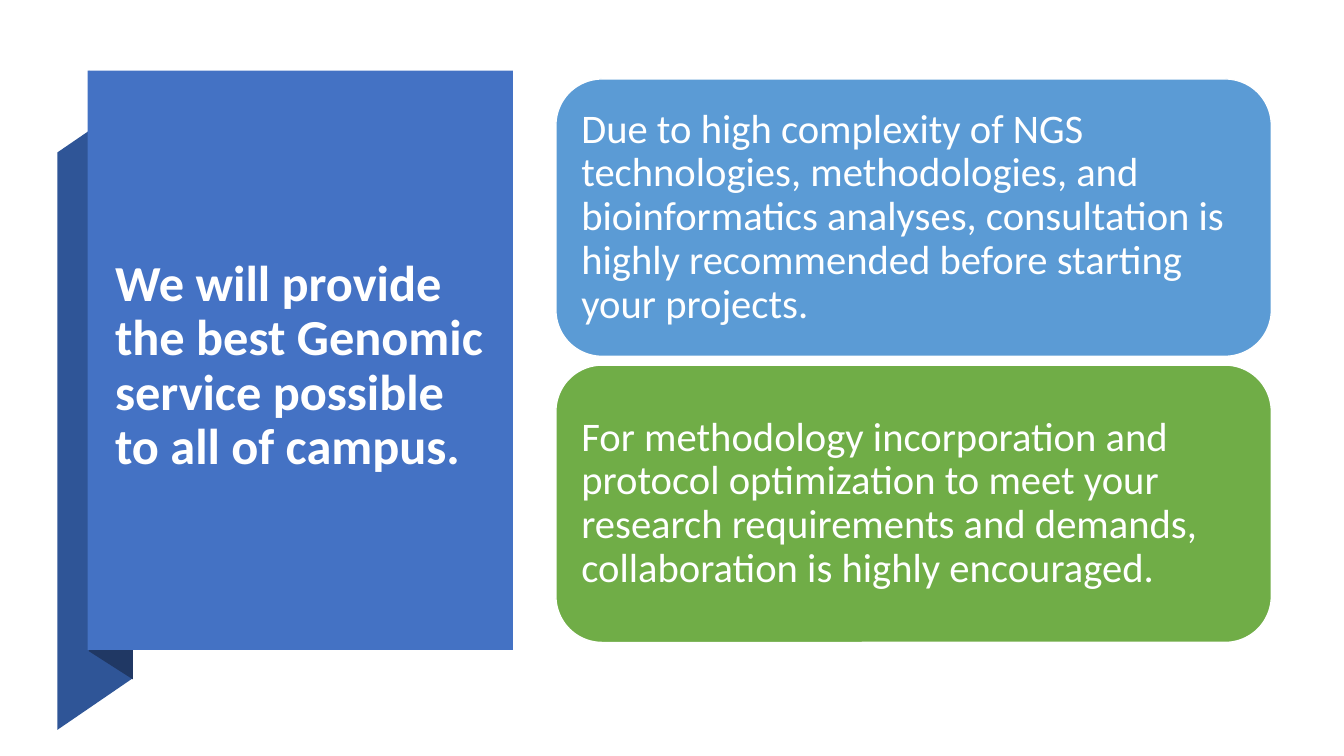
"""Build a slide with a folded ribbon panel and two message cards."""
from dataclasses import dataclass

from pptx import Presentation
from pptx import util as u
from pptx.dml.color import RGBColor
from pptx.enum import shapes, text


@dataclass(frozen=True)
class Theme:
    """Colours, font and type sizes of the slide."""
    panel: str = "4472C4"
    ribbon: str = "2F5597"
    fold: str = "203864"
    consultation: str = "5B9BD5"
    collaboration: str = "70AD47"
    white: str = "FFFFFF"
    font: str = "Calibri"
    headline_size: int = 36
    card_size: int = 29


THEME = Theme()
RIBBON = [(1.45, 18.39), (3.35, 17.09), (3.35, 2.54), (1.45, 3.84)]
FOLD = [(2.24, 16.41), (3.35, 17.12), (3.35, 2.51), (2.24, 1.78)]
HEADLINE = "We will provide the best Genomic service possible to all of campus."
CARDS = [
    (THEME.consultation,
     "Due to high complexity of NGS technologies, methodologies, and bioinformatics "
     "analyses, consultation is highly recommended before starting your projects."),
    (THEME.collaboration,
     "For methodology incorporation and protocol optimization to meet your research "
     "requirements and demands, collaboration is highly encouraged."),
]
CARD_TOP, CARD_PITCH = 1.99, 7.21


def paint(shape, fill, outline=None):
    """Give a shape a flat fill, no shadow and an optional outline."""
    shape.shadow.inherit = False
    shape.fill.solid()
    shape.fill.fore_color.rgb = RGBColor.from_string(fill)
    if outline:
        shape.line.color.rgb = RGBColor.from_string(outline)
        shape.line.width = u.Pt(1)
    else:
        shape.line.fill.background()


def add_facet(slide, corners, fill):
    """Draw one closed face of the ribbon from corners in centimetres."""
    points = [(u.Cm(x), u.Cm(y)) for x, y in corners]
    builder = slide.shapes.build_freeform(*points[0])
    builder.add_line_segments(points[1:], close=True)
    paint(builder.convert_to_shape(), fill)


def add_block(slide, preset, box, fill, outline=None):
    """Draw a filled preset shape in a box given in centimetres."""
    block = slide.shapes.add_shape(preset, *(u.Cm(length) for length in box))
    paint(block, fill, outline)
    return block


def write(block, words, size, insets, bold=False):
    """Set left-aligned white words, vertically centred, inside a block."""
    frame = block.text_frame
    frame.word_wrap = True
    frame.vertical_anchor = text.MSO_ANCHOR.MIDDLE
    (frame.margin_left, frame.margin_top,
     frame.margin_right, frame.margin_bottom) = (u.Cm(inset) for inset in insets)
    paragraph = frame.paragraphs[0]
    paragraph.alignment = text.PP_ALIGN.LEFT
    paragraph.line_spacing = 0.9
    run = paragraph.add_run()
    run.text = words
    run.font.name = THEME.font
    run.font.size = u.Pt(size)
    run.font.bold = bold
    run.font.color.rgb = RGBColor.from_string(THEME.white)


def main():
    """Compose the slide and save it."""
    deck = Presentation()
    deck.slide_width, deck.slide_height = u.Cm(33.87), u.Cm(19.05)
    slide = deck.slides.add_slide(deck.slide_layouts[6])

    add_facet(slide, RIBBON, THEME.ribbon)
    add_facet(slide, FOLD, THEME.fold)
    panel = add_block(slide, shapes.MSO_SHAPE.RECTANGLE,
                      (2.21, 1.78, 10.72, 14.6), THEME.panel)
    write(panel, HEADLINE, THEME.headline_size, (0.69, 0.46, 0.69, 0.13), bold=True)

    for row, (fill, message) in enumerate(CARDS):
        card = add_block(slide, shapes.MSO_SHAPE.ROUNDED_RECTANGLE,
                         (14.01, CARD_TOP + row * CARD_PITCH, 18.03, 6.99),
                         fill, THEME.white)
        write(card, message, THEME.card_size, (0.3, 0.3, 0.3, 0.3))

    deck.save("out.pptx")


if __name__ == "__main__":
    main()
